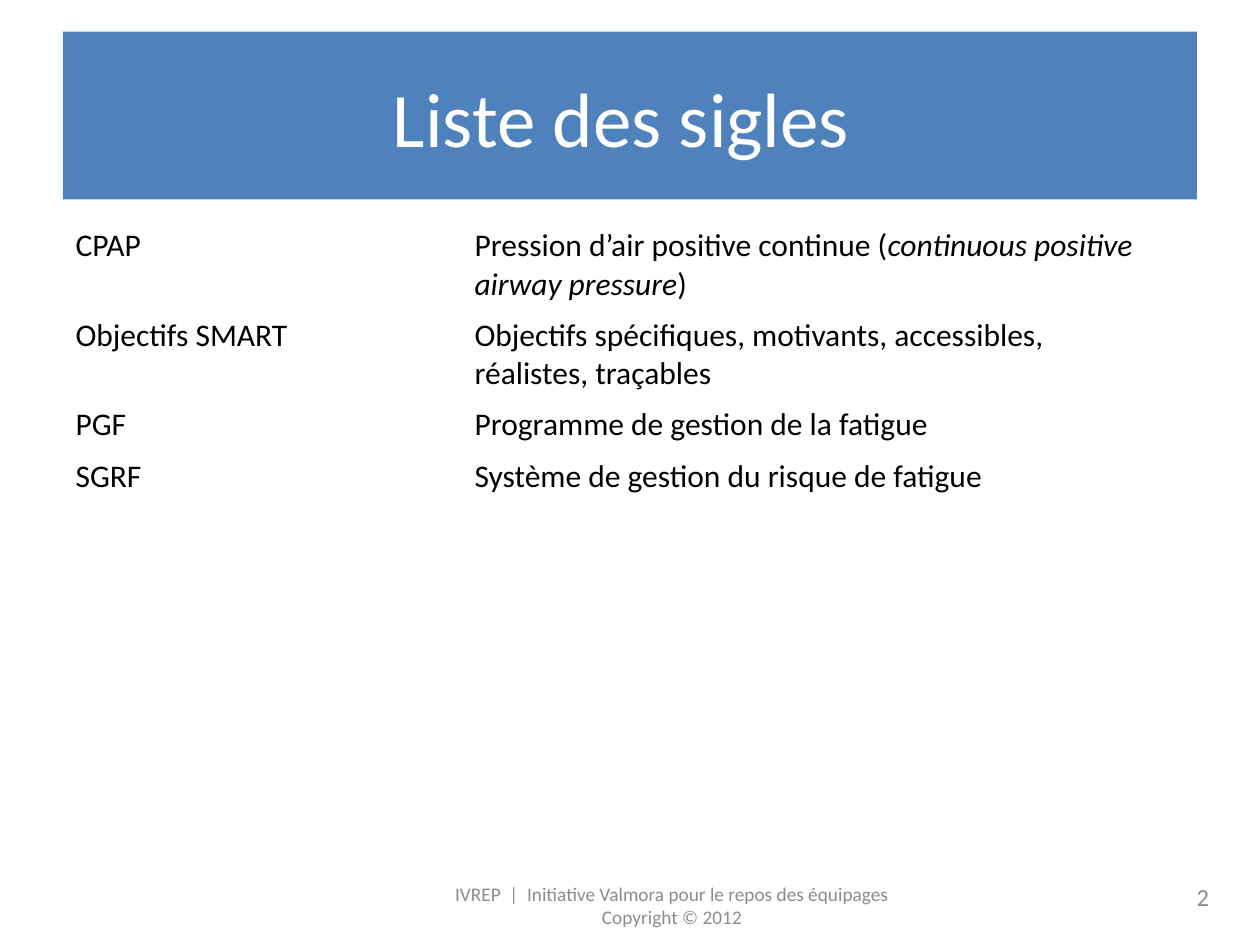
"""Builds the acronym list slide."""
from pptx import Presentation
from pptx.dml.color import RGBColor
from pptx.enum.shapes import MSO_SHAPE
from pptx.enum.text import MSO_ANCHOR, PP_ALIGN
from pptx.util import Pt

COLORS = {"banner": "4F81BD", "title": "FFFFFF", "text": "000000", "footer": "8C8C8C"}

ACRONYMS = [
    ("CPAP", [[("Pression d’air positive continue (", False),
               ("continuous positive airway pressure", True), (")", False)]]),
    ("Objectifs SMART", [[("Objectifs spécifiques, motivants, accessibles,", False)],
                         [("réalistes, traçables", False)]]),
    ("PGF", [[("Programme de gestion de la fatigue", False)]]),
    ("SGRF", [[("Système de gestion du risque de fatigue", False)]]),
    ("", []),
]


class SlideBuilder:
    """Holds the style and the current slide."""

    font = "Calibri"

    def __init__(self, slide):
        self.slide = slide

    def color(self, name):
        return RGBColor.from_string(COLORS[name])

    def style(self, tf, size, color, align=PP_ALIGN.LEFT):
        for p in tf.paragraphs:
            p.alignment = align
            for r in p.runs:
                r.font.name, r.font.size = self.font, Pt(size)
                r.font.color.rgb = self.color(color)

    def banner(self, x, y, w, h):
        sp = self.slide.shapes.add_shape(MSO_SHAPE.RECTANGLE, Pt(x), Pt(y), Pt(w), Pt(h))
        sp.shadow.inherit = False
        sp.fill.solid()
        sp.fill.fore_color.rgb = self.color("banner")
        sp.line.fill.background()
        self.slide.shapes.title.element.addprevious(sp.element)

    def title(self, text, x, y, w, h):
        sp = self.slide.shapes.title
        sp.left, sp.top, sp.width, sp.height = Pt(x), Pt(y), Pt(w), Pt(h)
        tf = sp.text_frame
        tf.text = text
        tf.vertical_anchor = MSO_ANCHOR.MIDDLE
        self.style(tf, 44, "title", PP_ALIGN.CENTER)

    def text(self, text, x, y, w, h, size, align):
        tf = self.slide.shapes.add_textbox(Pt(x), Pt(y), Pt(w), Pt(h)).text_frame
        tf.word_wrap = True
        tf.margin_top = tf.margin_bottom = 0
        tf.vertical_anchor = MSO_ANCHOR.MIDDLE
        tf.text = text
        self.style(tf, size, "footer", align)

    def table(self, rows, x, y, widths, row_h):
        frame = self.slide.shapes.add_table(len(rows), len(widths), Pt(x), Pt(y),
                                            Pt(sum(widths)), Pt(row_h * len(rows)))
        table = frame.table
        table.first_row = table.horz_banding = False
        for col, width in zip(table.columns, widths):
            col.width = Pt(width)
        for row, (acronym, meaning) in zip(table.rows, rows):
            short, full = row.cells
            short.text_frame.text = acronym
            tf = full.text_frame
            for i, runs in enumerate(meaning):
                p = tf.add_paragraph() if i else tf.paragraphs[0]
                for text, italic in runs:
                    r = p.add_run()
                    r.text, r.font.italic = text, italic
            for cell in row.cells:
                cell.fill.background()
                self.style(cell.text_frame, 18, "text")


def main():
    prs = Presentation()
    prs.slide_width, prs.slide_height = Pt(720), Pt(540)
    s = SlideBuilder(prs.slides.add_slide(prs.slide_layouts[5]))
    s.banner(36, 18, 648, 96)
    s.title("Liste des sigles ", 36, 21.6, 648, 90)
    s.table(ACRONYMS, 36, 126, [228, 420], 29.3)
    s.text("IVREP  |  Initiative Valmora pour le repos des équipages\nCopyright © 2012",
           216, 503.6, 336, 27, 11, PP_ALIGN.CENTER)
    s.text("2", 529.9, 498, 168, 29, 14, PP_ALIGN.RIGHT)
    prs.save("out.pptx")


if __name__ == "__main__":
    main()
